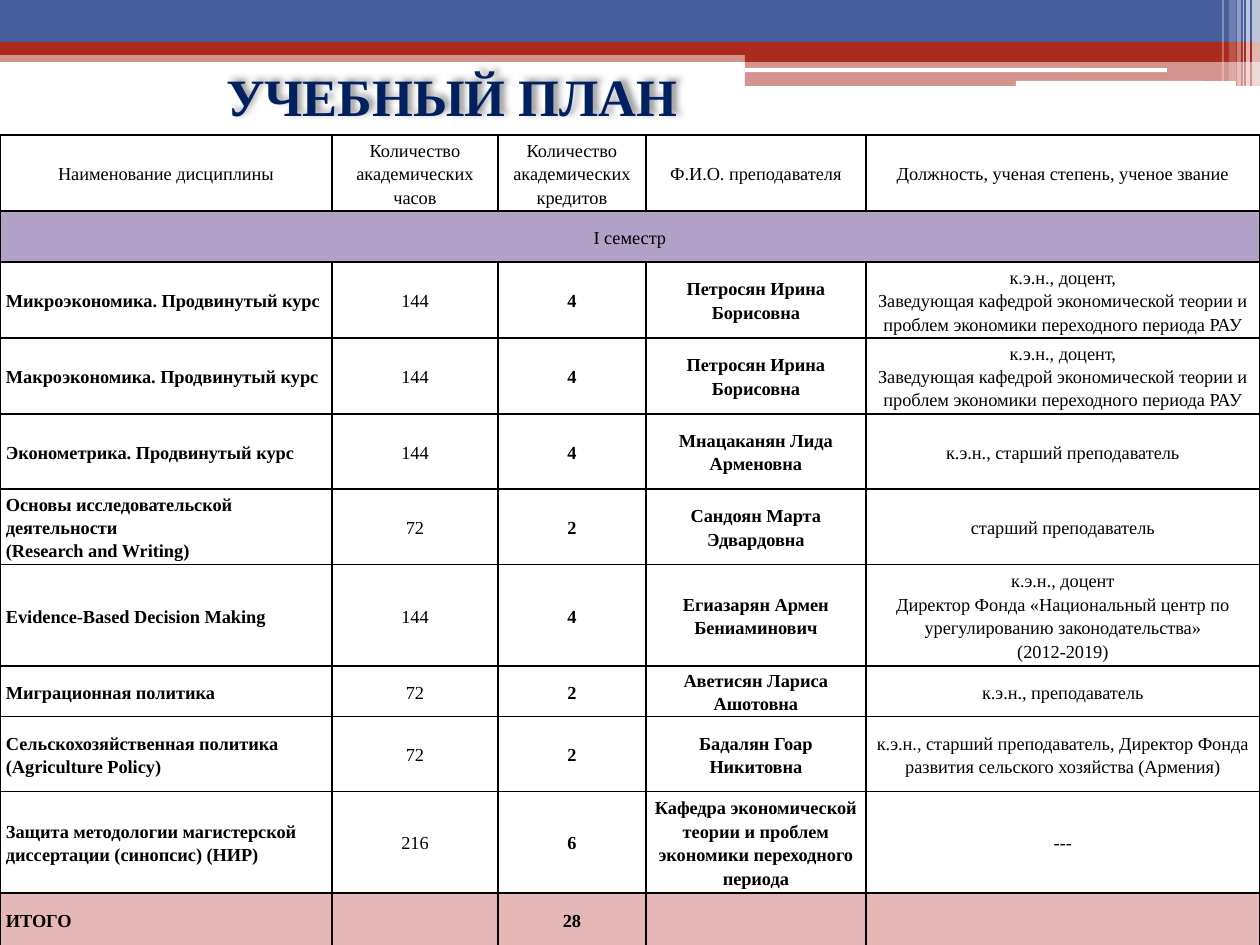
from dataclasses import dataclass
from typing import Optional

from lxml import etree
from pptx import Presentation
from pptx import util as u
from pptx.dml.color import RGBColor
from pptx.enum import shapes, text
from pptx.oxml.ns import qn

SCALE = 914400 / 126
BLUE = RGBColor(0x46, 0x5E, 0x9C)
RED = RGBColor(0xAA, 0x2B, 0x1E)
WHITE = RGBColor(0xFF, 0xFF, 0xFF)
BLACK = RGBColor(0x00, 0x00, 0x00)
NAVY = RGBColor(0x00, 0x20, 0x60)
LILAC = RGBColor(0xB2, 0xA1, 0xC7)
PINK = RGBColor(0xE5, 0xB8, 0xB7)
FACE = "Times New Roman"
LEFT, MID = text.PP_ALIGN.LEFT, text.PP_ALIGN.CENTER
RECT, ROUND = shapes.MSO_SHAPE.RECTANGLE, shapes.MSO_SHAPE.ROUNDED_RECTANGLE


@dataclass
class Bar:
    x: int
    y: int
    w: int
    h: int
    color: RGBColor
    alpha: int = 100
    kind: int = RECT


@dataclass
class Row:
    h: int
    cells: tuple[str, ...]
    bold: tuple[bool, ...] = (True, False, True, True, False)
    first: int = LEFT
    fill: Optional[RGBColor] = None
    span: bool = False


BARS = [
    Bar(0, 50, 1260, 12, RED, 50),
    Bar(0, 0, 1260, 42, BLUE),
    Bar(0, 42, 1260, 13, RED),
    Bar(745, 49, 515, 13, RED),
    Bar(745, 61, 515, 25, RED, 50),
    Bar(745, 68, 422, 4, WHITE, kind=ROUND),
    Bar(1016, 81, 220, 5, WHITE, kind=ROUND),
    Bar(1252, 0, 8, 86, WHITE, 65),
    Bar(1246, 0, 4, 86, WHITE, 65),
    Bar(1243, 0, 1, 86, WHITE, 60),
    Bar(1237, 0, 4, 86, WHITE, 40),
    Bar(1229, 0, 7, 81, WHITE, 20),
    Bar(1222, 0, 2, 81, WHITE, 30),
]
COLS = [332, 166, 148, 220, 394]
PLAIN = (False,) * 5
HEAD = ("к.э.н., доцент,\nЗаведующая кафедрой экономической теории и "
        "проблем экономики переходного периода РАУ")
ROWS = [
    Row(75, ("Наименование дисциплины", "Количество академических часов",
             "Количество академических кредитов", "Ф.И.О. преподавателя",
             "Должность, ученая степень, ученое звание"), PLAIN, MID),
    Row(51, ("I семестр", "", "", "", ""), PLAIN, MID, LILAC, True),
    Row(75, ("Микроэкономика. Продвинутый курс", "144", "4",
             "Петросян Ирина Борисовна", HEAD)),
    Row(75, ("Макроэкономика. Продвинутый курс", "144", "4",
             "Петросян Ирина Борисовна", HEAD)),
    Row(75, ("Эконометрика. Продвинутый курс", "144", "4",
             "Мнацаканян Лида Арменовна", "к.э.н., старший преподаватель")),
    Row(75, ("Основы исследовательской деятельности\n(Research and Writing)",
             "72", "2", "Сандоян Марта Эдвардовна", "старший преподаватель")),
    Row(75, ("Evidence-Based Decision Making", "144", "4",
             "Егиазарян Армен Бениаминович",
             "к.э.н., доцент\nДиректор Фонда «Национальный центр по "
             "урегулированию законодательства»\n(2012-2019)")),
    Row(50, ("Миграционная политика", "72", "2",
             "Аветисян Лариса Ашотовна", "к.э.н., преподаватель")),
    Row(75, ("Сельскохозяйственная политика (Agriculture Policy)", "72", "2",
             "Бадалян Гоар Никитовна",
             "к.э.н., старший преподаватель, Директор Фонда развития "
             "сельского хозяйства (Армения)")),
    Row(100, ("Защита методологии магистерской диссертации (синопсис) (НИР)",
              "216", "6", "Кафедра экономической теории и проблем экономики "
              "переходного периода", "---")),
    Row(54, ("ИТОГО", "", "28", "", ""), fill=PINK),
]


def px(n: int) -> u.Emu:
    return u.Emu(round(n * SCALE))


def put(obj, **vals) -> None:
    for name, val in vals.items():
        setattr(obj, name, val)


def sub(node, tag: str, **vals: str):
    return etree.SubElement(node, qn(tag), vals)


def write(frame, words: str, align: int, size: float, bold: bool,
          color: RGBColor, lead: float) -> None:
    frame.text = words
    for para in frame.paragraphs:
        put(para, alignment=align, line_spacing=lead)
        put(para.font, size=u.Pt(size))
        for run in para.runs:
            put(run.font, name=FACE, size=u.Pt(size), bold=bold)
            run.font.color.rgb = color


def draw_bar(slide, bar: Bar) -> None:
    box = slide.shapes.add_shape(bar.kind, px(bar.x), px(bar.y),
                                 px(bar.w), px(bar.h))
    box.shadow.inherit = False
    box.line.fill.background()
    box.fill.solid()
    box.fill.fore_color.rgb = bar.color
    if bar.alpha < 100:
        tint = box.fill._xPr.find(".//" + qn("a:srgbClr"))
        sub(tint, "a:alpha", val=str(bar.alpha * 1000))


def draw_title(slide) -> None:
    box = slide.shapes.add_textbox(px(44), px(47), px(816), px(97))
    put(box.text_frame, word_wrap=True,
        vertical_anchor=text.MSO_ANCHOR.MIDDLE)
    write(box.text_frame, "УЧЕБНЫЙ ПЛАН", MID, 30, True, NAVY, 1.0)
    glow = sub(sub(box._element.spPr, "a:effectLst"), "a:outerShdw",
               blurRad="50800", dist="38100", dir="18900000",
               algn="bl", rotWithShape="0")
    sub(sub(glow, "a:srgbClr", val=str(BLACK)), "a:alpha", val="40000")


def edge(cell) -> None:
    props = cell._tc.get_or_add_tcPr()
    for side in "LRTB":
        line = sub(props, "a:ln" + side, w="12700")
        sub(sub(line, "a:solidFill"), "a:srgbClr", val=str(BLACK))


def draw_table(slide) -> None:
    grid = slide.shapes.add_table(
        len(ROWS), len(COLS), 0, px(135), px(sum(COLS)),
        px(sum(row.h for row in ROWS))).table
    put(grid, first_row=False, horz_banding=False)
    for col, wide in zip(grid.columns, COLS):
        col.width = px(wide)
    for r, row in enumerate(ROWS):
        grid.rows[r].height = px(row.h)
        for c, words in enumerate(row.cells):
            cell = grid.cell(r, c)
            put(cell, margin_left=px(6), margin_right=px(6), margin_top=0,
                margin_bottom=0, vertical_anchor=text.MSO_ANCHOR.MIDDLE)
            edge(cell)
            if row.fill is None:
                cell.fill.background()
            else:
                cell.fill.solid()
                cell.fill.fore_color.rgb = row.fill
            write(cell.text_frame, words, MID if c else row.first, 10.5,
                  row.bold[c], BLACK, 1.15)
        if row.span:
            grid.cell(r, 0).merge(grid.cell(r, len(COLS) - 1))


def main() -> None:
    deck = Presentation()
    put(deck, slide_width=px(1260), slide_height=px(945))
    slide = deck.slides.add_slide(deck.slide_layouts[6])
    for bar in BARS:
        draw_bar(slide, bar)
    draw_title(slide)
    draw_table(slide)
    deck.save("out.pptx")


if __name__ == "__main__":
    main()
